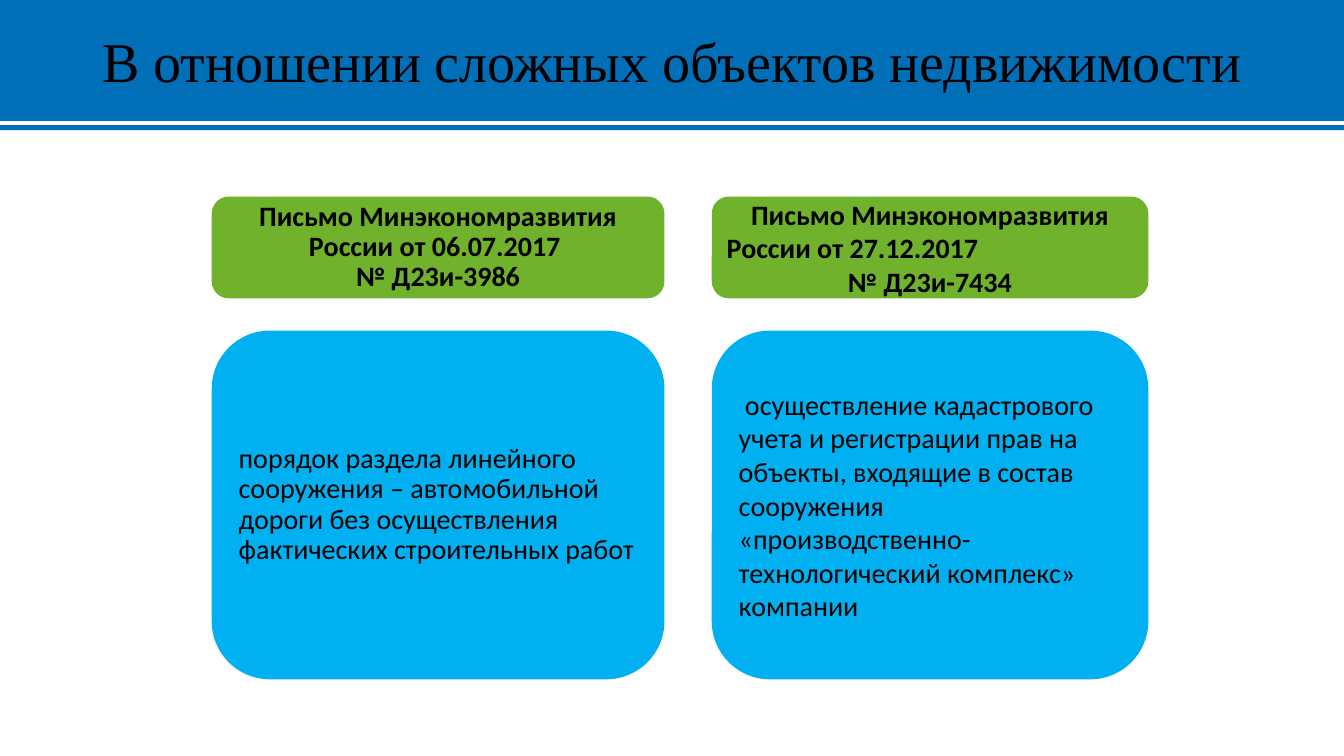
from pptx import Presentation
from pptx.dml.color import RGBColor
from pptx.enum.shapes import MSO_SHAPE
from pptx.enum.text import MSO_ANCHOR, PP_ALIGN
from pptx.util import Inches, Pt

COLORS = {"band": "006FB8", "header": "70B22C", "body": "00B0F0", "text": "000000"}
LEFT, CENTER = PP_ALIGN.LEFT, PP_ALIGN.CENTER

prs = Presentation()
prs.slide_width, prs.slide_height = Inches(13.33), Inches(7.5)
s = prs.slides.add_slide(prs.slide_layouts[6])


def add_block(box, color, lines=(), kind=MSO_SHAPE.ROUNDED_RECTANGLE, size=20,
              font="Calibri", bold=False, spacing=1.0, wrap=True):
    sp = s.shapes.add_shape(kind, *[Inches(v) for v in box])
    sp.shadow.inherit = False
    sp.fill.solid()
    sp.fill.fore_color.rgb = RGBColor.from_string(COLORS[color])
    sp.line.fill.background()
    tf = sp.text_frame
    tf.word_wrap = wrap
    tf.vertical_anchor = MSO_ANCHOR.MIDDLE
    for i, (text, align) in enumerate(lines):
        p = tf.add_paragraph() if i else tf.paragraphs[0]
        p.alignment = align
        p.line_spacing = spacing
        r = p.add_run()
        r.text = text
        r.font.name = font
        r.font.size = Pt(size)
        r.font.bold = bold
        r.font.color.rgb = RGBColor.from_string(COLORS["text"])


letters = [
    (2.1, 4.49, 0.9,
     [("Письмо Минэкономразвития России от 06.07.2017 ", CENTER),
      ("№ Д23и-3986", CENTER)],
     "порядок раздела линейного сооружения – автомобильной дороги "
     "без осуществления фактических строительных работ"),
    (7.06, 4.33, 1.0,
     [("Письмо Минэкономразвития", CENTER),
      ("России от 27.12.2017", LEFT),
      ("№ Д23и-7434", CENTER)],
     " осуществление кадастрового учета и регистрации прав на объекты, "
     "входящие в состав сооружения «производственно-технологический "
     "комплекс» компании"),
]
for left, width, spacing, header, body in letters:
    add_block((left, 3.28, width, 3.46), "body", [(body, LEFT)], spacing=spacing)
    add_block((left, 1.95, width, 1.01), "header", header, bold=True, spacing=spacing)

add_block((0, 1.24, 13.33, 0.05), "band", kind=MSO_SHAPE.RECTANGLE)
add_block((0, 0, 13.33, 1.2), "band",
          [("В отношении сложных объектов недвижимости", CENTER)],
          kind=MSO_SHAPE.RECTANGLE, size=40, font="Times New Roman", wrap=False)

prs.save("out.pptx")
